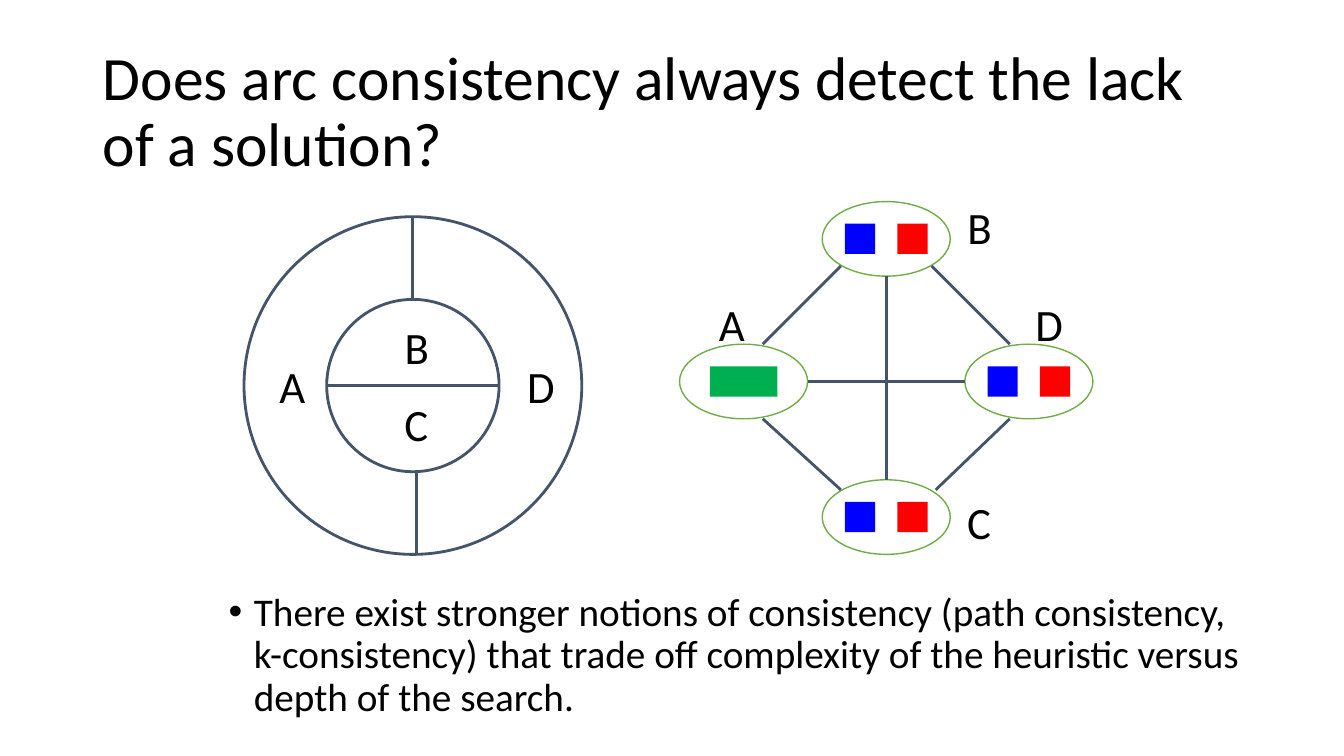
"""Build the slide on arc consistency with a ring map and its constraint graph."""
from pptx import Presentation
from pptx.dml.color import RGBColor
from pptx.enum.shapes import MSO_CONNECTOR, MSO_SHAPE
from pptx.enum.text import MSO_ANCHOR, PP_ALIGN
from pptx.oxml.ns import qn
from pptx.util import Inches, Pt
from lxml import etree

OVAL, RECT = MSO_SHAPE.OVAL, MSO_SHAPE.RECTANGLE
LINE = MSO_CONNECTOR.STRAIGHT
TOP, MID = MSO_ANCHOR.TOP, MSO_ANCHOR.MIDDLE
LEFT, CENTER = PP_ALIGN.LEFT, PP_ALIGN.CENTER
BLACK = RGBColor(0x00, 0x00, 0x00)
WHITE = RGBColor(0xFF, 0xFF, 0xFF)
SLATE = RGBColor(0x44, 0x54, 0x6A)
LIME = RGBColor(0x70, 0xAD, 0x47)
GREEN = RGBColor(0x00, 0xB0, 0x50)
BLUE = RGBColor(0x00, 0x00, 0xFF)
RED = RGBColor(0xFF, 0x00, 0x00)
CELL = Inches(0.1)

deck = Presentation()
deck.slide_width, deck.slide_height = Inches(13.33), Inches(7.5)
slide = deck.slides.add_slide(deck.slide_layouts[6])
shapes = slide.shapes


def write(text, size, x, y, w, h, anchor=TOP, align=LEFT, wrap=True):
    """Add a text box, placed in grid cells, and return its paragraph."""
    frame = shapes.add_textbox(*(int(n * CELL) for n in (x, y, w, h))).text_frame
    frame.word_wrap, frame.vertical_anchor = wrap, anchor
    para = frame.paragraphs[0]
    para.text, para.alignment = text, align
    para.font.size, para.font.name = Pt(size), "Calibri"
    para.font.color.rgb = BLACK
    return para


def draw(kind, x, y, w, h, fill=None, edge=None, width=1):
    """Add a shape centred on a grid point."""
    box = (x - w / 2, y - h / 2, w, h)
    shape = shapes.add_shape(kind, *(int(n * CELL) for n in box))
    shape.shadow.inherit = False
    if fill is None:
        shape.fill.background()
    else:
        shape.fill.solid()
        shape.fill.fore_color.rgb = fill
    if edge is None:
        shape.line.fill.background()
    else:
        shape.line.color.rgb = edge
        shape.line.width = Pt(width)


title = write("Does arc consistency always detect the lack of a solution?",
              44, 9.2, 4, 115, 14.5, MID)
title.line_spacing = 0.9

note = write("There exist stronger notions of consistency (path consistency, "
             "k-consistency) that trade off complexity of the heuristic versus "
             "depth of the search.", 28, 21.7, 58.3, 102.5, 15.8)
note.line_spacing = 0.9
props = note._p.get_or_add_pPr()
props.set("marL", str(Inches(0.25)))
props.set("indent", str(-Inches(0.25)))
font = etree.SubElement(props, qn("a:buFont"))
font.set("typeface", "Arial")
etree.SubElement(props, qn("a:buChar")).set("char", "•")

ring_x, ring_y, outer, inner = 40.95, 38.25, 16.75, 8.55
for radius in (outer, inner):
    draw(OVAL, ring_x, ring_y, 2 * radius, 2 * radius, None, SLATE, 2)

mid_x, mid_y = 87.9, 37.85
step, rise, fall = 14.15, 14.15, 13.45
half_w, half_h, gap = 6.35, 3.7, 2.6
nodes = [(mid_x - step, mid_y), (mid_x + step, mid_y),
         (mid_x, mid_y - rise), (mid_x, mid_y + fall)]
for num, (x, y) in enumerate(nodes):
    draw(OVAL, x, y, 2 * half_w, 2 * half_h, WHITE, LIME)
    if num == 0:
        draw(RECT, x, y, 6.7, 3, GREEN)
    else:
        draw(RECT, x - gap, y, 3, 3, BLUE)
        draw(RECT, x + gap, y, 3, 3, RED)

lines = [
    (ring_x - inner, ring_y, ring_x + inner, ring_y),
    (ring_x, ring_y - outer, ring_x, ring_y - inner),
    (ring_x + 0.4, ring_y + inner, ring_x + 0.4, ring_y + outer),
    (mid_x, mid_y - rise + half_h, mid_x, mid_y + fall - half_h),
    (mid_x - step + half_w, mid_y, mid_x + step - half_w, mid_y),
]
for side in (-1, 1):
    near, far = mid_x + 4.5 * side, mid_x + 12.25 * side
    lines.append((near, 26.4, far, mid_y - half_h))
    lines.append((far, mid_y + half_h, near + 0.2 * (side + 1), 48.6))
for ends in lines:
    link = shapes.add_connector(LINE, *(int(n * CELL) for n in ends))
    link.line.color.rgb, link.line.width = SLATE, Pt(2)
    etree.SubElement(link._element.spPr, qn("a:effectLst"))

for name, x, y in (("A", 29, 35.1), ("B", 41.35, 31.2),
                   ("C", 41.3, 38.9), ("D", 53.6, 35.1),
                   ("A", 72.6, 28.9), ("B", 97.15, 19.3),
                   ("C", 97.1, 48.6), ("D", 104, 28.9)):
    write(name, 32, x - 2.3, y, 4.6, 6.4, align=CENTER, wrap=False)

deck.save("out.pptx")
